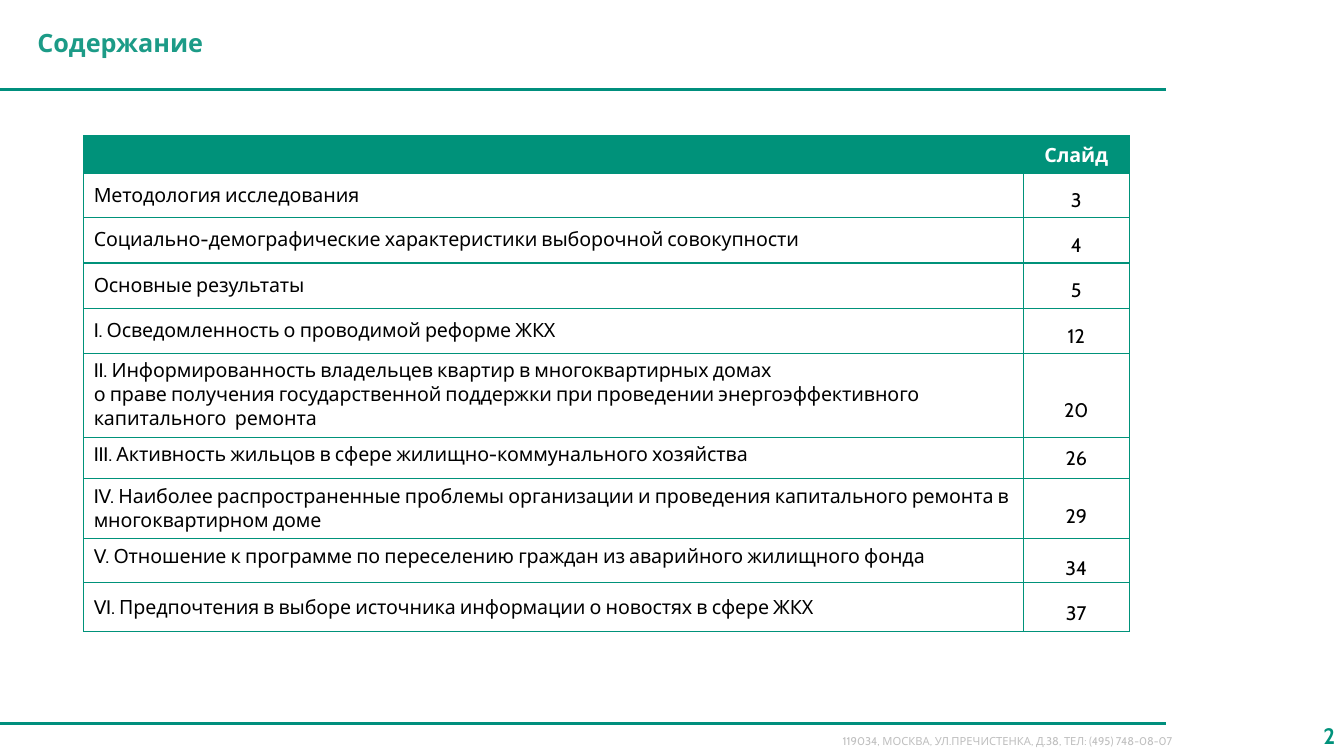
from lxml.etree import SubElement
from pptx import Presentation
from pptx.dml.color import RGBColor
from pptx.enum.shapes import MSO_CONNECTOR
from pptx.enum.text import MSO_ANCHOR as Anchor, PP_ALIGN as Align
from pptx.oxml.ns import qn
from pptx.util import Inches, Pt

FONT = "Cabin"
RULE_GREEN = RGBColor(0x00, 0x8F, 0x7D)
TABLE_GREEN = RGBColor(0x00, 0x92, 0x7A)
NUMBER_GREEN = RGBColor(0x00, 0x92, 0x7B)
TITLE_GREEN = RGBColor(0x1C, 0x9B, 0x87)
GRAY = RGBColor(0xBF, 0xBF, 0xBF)
BLACK = RGBColor(0, 0, 0)
WHITE = RGBColor(255, 255, 255)

COLUMN_WIDTHS = (9.32, 1.05)
HEADER_HEIGHT = 0.37
CONTENTS = [
    ("Методология исследования", "3", 0.44, 0.1, 0.1),
    ("Социально-демографические характеристики выборочной совокупности", "4", 0.45, 0.1, 0.1),
    ("Основные результаты", "5", 0.45, 0.1, 0.1),
    ("I. Осведомленность о проводимой реформе ЖКХ", "12", 0.45, 0.1, 0.1),
    ("II. Информированность владельцев квартир в многоквартирных домах\n"
     "о праве получения государственной поддержки при проведении "
     "энергоэффективного капитального  ремонта", "20", 0.83, 0.05, 0.3),
    ("III. Активность жильцов в сфере жилищно-коммунального хозяйства", "26", 0.41, 0.05, 0.01),
    ("IV. Наиболее распространенные проблемы организации и проведения капитального "
     "ремонта в  многоквартирном доме", "29", 0.59, 0.06, 0.16),
    ("V. Отношение к программе по переселению граждан из аварийного жилищного фонда",
     "34", 0.44, 0.06, 0.16),
    ("VI. Предпочтения в выборе источника информации о новостях в сфере ЖКХ",
     "37", 0.49, 0.13, 0.13),
]


def format_text(frame, size, color, bold=False, align=Align.LEFT, spacing=0):
    for para in frame.paragraphs:
        para.alignment = align
        for span in para.runs:
            span.font.name = FONT
            span.font.size = Pt(size)
            span.font.bold = bold
            span.font.color.rgb = color
            if spacing:
                span._r.get_or_add_rPr().set("spc", str(spacing))


def place(shape, left, top, width, height):
    shape.left, shape.top = Inches(left), Inches(top)
    shape.width, shape.height = Inches(width), Inches(height)


def add_rule(page, left, top, width):
    rule = page.shapes.add_connector(
        MSO_CONNECTOR.STRAIGHT, Inches(left), Inches(top), Inches(left + width), Inches(top))
    rule.line.color.rgb = RULE_GREEN
    rule.line.width = Pt(2)
    SubElement(rule._element.spPr, qn("a:effectLst"))


def add_label(page, text, box, size, color, **style):
    label = page.shapes.add_textbox(*map(Inches, box))
    label.text_frame.word_wrap = True
    label.text_frame.vertical_anchor = Anchor.MIDDLE
    label.text_frame.text = text
    format_text(label.text_frame, size, color, **style)


def add_header(page, left, top, width, height):
    title = page.shapes.title
    place(title, left + 0.27, top, width - 0.72, height - 0.04)
    title.text_frame.text = "Содержание"
    title.text_frame.vertical_anchor = Anchor.MIDDLE
    format_text(title.text_frame, 18, TITLE_GREEN, bold=True, align=Align.JUSTIFY)
    add_rule(page, left, top + height, width)


def add_footer(page, left, top, width):
    add_rule(page, left, top, width)
    add_label(page, "119034, МОСКВА, УЛ.ПРЕЧИСТЕНКА, Д.38, ТЕЛ: (495) 748-08-07",
              (left + 8.26, top + 0.05, 3.84, 0.24), 8, GRAY)
    add_label(page, "2", (left + 12.65, top - 0.08, 0.69, 0.4), 16, NUMBER_GREEN,
              bold=True, align=Align.RIGHT)


def set_borders(cell):
    properties = cell._tc.get_or_add_tcPr()
    for side in ("lnL", "lnR", "lnT", "lnB"):
        border = SubElement(properties, qn(f"a:{side}"), w=str(Pt(1)))
        fill = SubElement(border, qn("a:solidFill"))
        SubElement(fill, qn("a:srgbClr"), val=str(TABLE_GREEN))


def fill_cell(cell, text, inset, fill=None, anchor=Anchor.TOP, indent=0, **style):
    set_borders(cell)
    if fill is None:
        cell.fill.background()
    else:
        cell.fill.solid()
        cell.fill.fore_color.rgb = fill
    cell.margin_left, cell.margin_top = Inches(indent), Inches(inset)
    cell.margin_right = cell.margin_bottom = 0
    cell.vertical_anchor = anchor
    cell.text_frame.text = text
    format_text(cell.text_frame, 14, **style)


def add_contents(page, left, top):
    heights = [HEADER_HEIGHT] + [row[2] for row in CONTENTS]
    frame = page.shapes.add_table(
        len(heights), len(COLUMN_WIDTHS), Inches(left), Inches(top),
        Inches(sum(COLUMN_WIDTHS)), Inches(sum(heights)))
    table = frame.table
    table.horz_banding = False
    for column, width in zip(table.columns, COLUMN_WIDTHS):
        column.width = Inches(width)
    for row, height in zip(table.rows, heights):
        row.height = Inches(height)
    for column, (text, inset) in enumerate((("", 0), ("Слайд", 0.07))):
        fill_cell(table.cell(0, column), text, inset, fill=TABLE_GREEN,
                  color=WHITE, bold=True, align=Align.CENTER, spacing=-10)
    for index, (topic, number, _, topic_inset, number_inset) in enumerate(CONTENTS, 1):
        fill_cell(table.cell(index, 0), topic, topic_inset, indent=0.1,
                  color=BLACK, spacing=-10)
        fill_cell(table.cell(index, 1), number, number_inset, anchor=Anchor.MIDDLE,
                  color=BLACK, align=Align.CENTER)


def main():
    deck = Presentation()
    deck.slide_width, deck.slide_height = Inches(13.33), Inches(7.5)
    page = deck.slides.add_slide(deck.slide_layouts[5])
    add_header(page, 0, 0, 11.56, 0.89)
    add_contents(page, 0.83, 1.35)
    add_footer(page, 0, 7.18, 11.56)
    deck.save("out.pptx")


if __name__ == "__main__":
    main()
